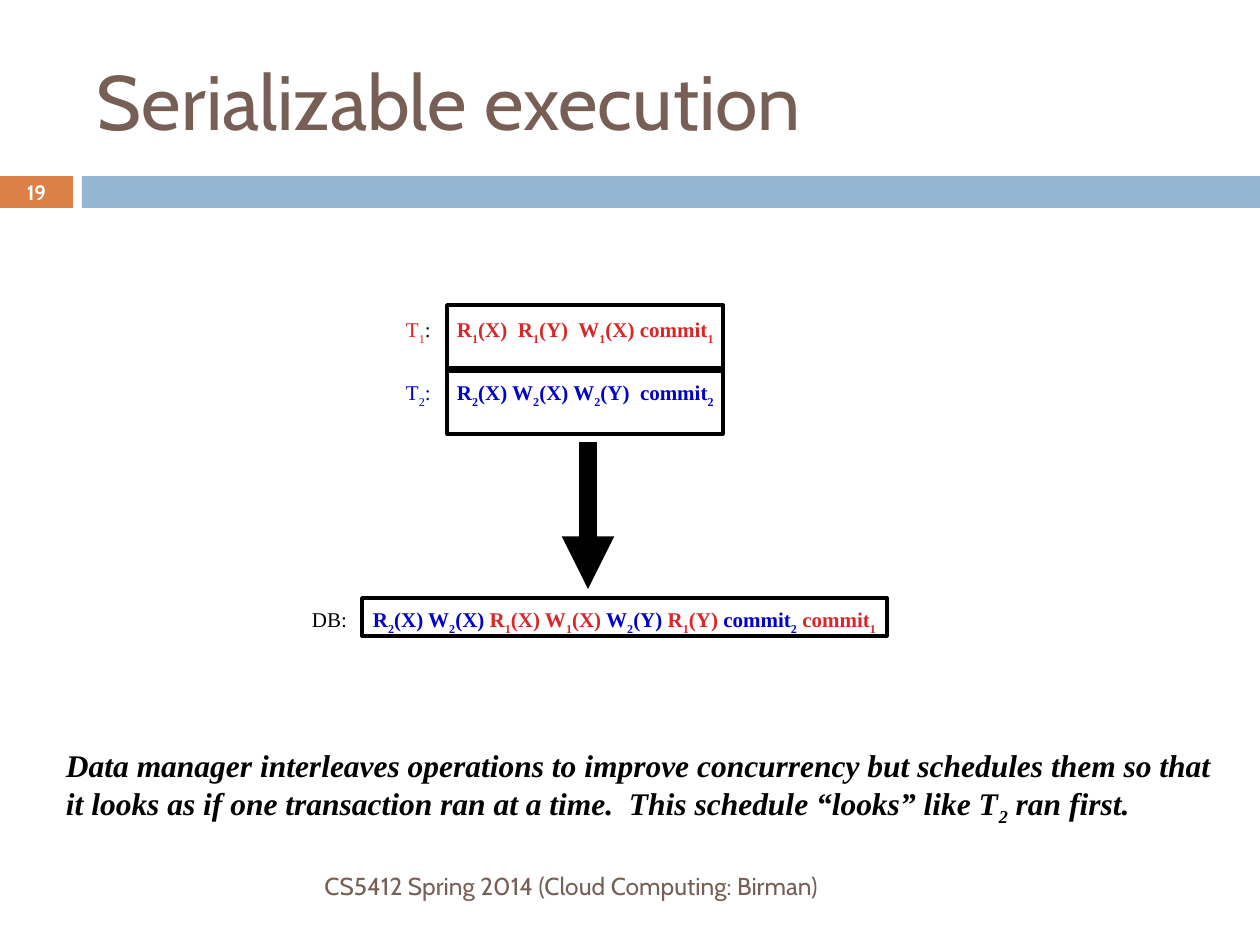
from dataclasses import dataclass

from lxml import etree
from pptx import Presentation
from pptx.dml.color import RGBColor
from pptx.enum.shapes import MSO_CONNECTOR, MSO_SHAPE
from pptx.enum.text import MSO_ANCHOR, PP_ALIGN
from pptx.oxml.ns import qn
from pptx.slide import Slide
from pptx.util import Emu, Pt

RECTANGLE = MSO_SHAPE.RECTANGLE
STRAIGHT = MSO_CONNECTOR.STRAIGHT
TOP, MIDDLE = MSO_ANCHOR.TOP, MSO_ANCHOR.MIDDLE
LEFT, CENTER, RIGHT = PP_ALIGN.LEFT, PP_ALIGN.CENTER, PP_ALIGN.RIGHT

EMU_PER_PX = 914400 / 126
COLORS = {
    "first": "D92727",
    "second": "0000CC",
    "ink": "000000",
    "brown": "775F55",
    "orange": "DD8047",
    "blue": "94B6D2",
    "white": "FFFFFF",
}
TITLE = {"name": "Cabin", "size": Pt(44)}
FOOTER = {"name": "Cabin", "size": Pt(14)}
NUMBER = {"name": "Cabin", "size": Pt(11.9), "bold": True}
LABEL = {"name": "Times New Roman", "size": Pt(12)}
OPERATIONS = {**LABEL, "bold": True}
REMARK = {**LABEL, "size": Pt(18), "bold": True, "italic": True}


@dataclass(frozen=True)
class Box:
    left: int
    top: int
    width: int
    height: int

    def emu(self) -> list[Emu]:
        return [px(v) for v in (self.left, self.top, self.width, self.height)]


@dataclass(frozen=True)
class Part:
    text: str
    color: str


@dataclass(frozen=True)
class Schedule:
    frame: Box
    label_left: int
    text_left: int
    text_top: int
    label: list[Part]
    operations: list[Part]


@dataclass(frozen=True)
class Caption:
    box: Box
    text: str
    color: str
    font: dict
    align: PP_ALIGN = LEFT
    anchor: MSO_ANCHOR = MIDDLE


def px(value: int) -> Emu:
    return Emu(round(value * EMU_PER_PX))


def rgb(color: str) -> RGBColor:
    return RGBColor.from_string(COLORS[color])


def split_subscripts(text: str) -> list[tuple[str, bool]]:
    head, *tails = text.split("_")
    pieces = [(head, False)]
    for tail in tails:
        pieces += [(tail[0], True), (tail[1:], False)]
    return [piece for piece in pieces if piece[0]]


def add_text(slide: Slide, box: Box, parts: list[Part], font: dict,
             align: PP_ALIGN = LEFT, anchor: MSO_ANCHOR = TOP,
             inset: tuple[int, int] = (1, 1), wrap: bool = True) -> None:
    frame = slide.shapes.add_textbox(*box.emu()).text_frame
    side, edge = map(px, inset)
    layout = {"word_wrap": wrap, "vertical_anchor": anchor, "margin_left": side,
              "margin_right": side, "margin_top": edge, "margin_bottom": edge}
    for name, value in layout.items():
        setattr(frame, name, value)
    paragraph = frame.paragraphs[0]
    paragraph.alignment = align
    for part in parts:
        for text, lowered in split_subscripts(part.text):
            run = paragraph.add_run()
            run.text = text
            for name, value in font.items():
                setattr(run.font, name, value)
            run.font.color.rgb = rgb(part.color)
            if lowered:
                run.font._element.set("baseline", "-25000")


def add_bar(slide: Slide, box: Box, color: str) -> None:
    bar = slide.shapes.add_shape(RECTANGLE, *box.emu())
    bar.shadow.inherit = False
    bar.fill.solid()
    bar.fill.fore_color.rgb = rgb(color)
    bar.line.fill.background()


def add_schedule(slide: Slide, schedule: Schedule) -> None:
    frame = slide.shapes.add_shape(RECTANGLE, *schedule.frame.emu())
    frame.shadow.inherit = False
    frame.fill.background()
    frame.line.color.rgb = rgb("ink")
    frame.line.width = Pt(2)
    for left, right, parts, font in (
        (schedule.label_left, schedule.text_left, schedule.label, LABEL),
        (schedule.text_left, schedule.frame.left + schedule.frame.width,
         schedule.operations, OPERATIONS),
    ):
        box = Box(left - 1, schedule.text_top, right - left, 28)
        add_text(slide, box, parts, font, wrap=False)


def add_arrow(slide: Slide, x: int, top: int, bottom: int) -> None:
    arrow = slide.shapes.add_connector(STRAIGHT, px(x), px(top), px(x), px(bottom))
    arrow.line.color.rgb = rgb("ink")
    arrow.line.width = Pt(10)
    etree.SubElement(arrow.line._get_or_add_ln(), qn("a:tailEnd"), type="triangle")
    etree.SubElement(arrow._element.spPr, qn("a:effectLst"))


BARS = [(Box(0, 176, 73, 32), "orange"), (Box(82, 176, 1178, 32), "blue")]

CAPTIONS = [
    Caption(Box(84, 32, 1124, 136), "Serializable execution", "brown", TITLE),
    Caption(Box(53, 740, 1176, 164),
            "Data manager interleaves operations to improve concurrency but "
            "schedules them so that it looks as if one transaction ran at a time.  "
            "This schedule “looks” like T_2 ran first.", "ink", REMARK, anchor=TOP),
    Caption(Box(84, 861, 747, 50), "CS5412 Spring 2014 (Cloud Computing: Birman)",
            "brown", FOOTER, RIGHT),
    Caption(Box(0, 175, 73, 34), "19", "white", NUMBER, CENTER),
]

SCHEDULES = [
    Schedule(Box(447, 305, 276, 66), 406, 457, 316,
             [Part("T_1", "first"), Part(":", "ink")],
             [Part("R_1(X)  R_1(Y)  W_1(X) commit_1", "first")]),
    Schedule(Box(447, 368, 276, 66), 406, 457, 379,
             [Part("T_2:", "second")],
             [Part("R_2(X) W_2(X) W_2(Y)  commit_2", "second")]),
    Schedule(Box(362, 598, 525, 38), 312, 373, 606,
             [Part("DB:", "ink")],
             [Part("R_2(X) W_2(X) ", "second"), Part("R_1(X) W_1(X)", "first"),
              Part(" W_2(Y) ", "second"), Part("R_1(Y)", "first"),
              Part(" commit_2 ", "second"), Part("commit_1", "first")]),
]


def main() -> None:
    deck = Presentation()
    deck.slide_width, deck.slide_height = px(1260), px(945)
    slide = deck.slides.add_slide(deck.slide_layouts[6])
    for box, color in BARS:
        add_bar(slide, box, color)
    for caption in CAPTIONS:
        add_text(slide, caption.box, [Part(caption.text, caption.color)],
                 caption.font, caption.align, caption.anchor, inset=(13, 6))
    for schedule in SCHEDULES:
        add_schedule(slide, schedule)
    add_arrow(slide, 588, 442, 589)
    deck.save("out.pptx")


if __name__ == "__main__":
    main()
